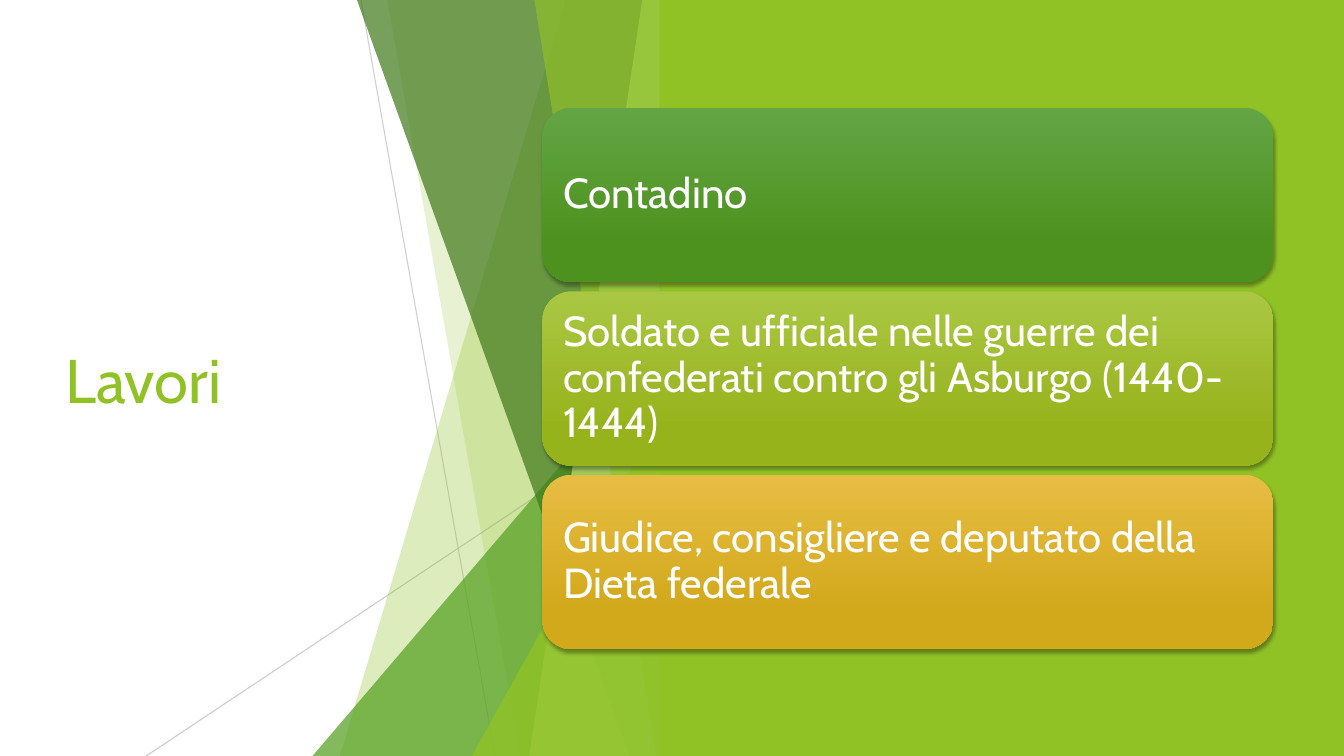
from dataclasses import dataclass

from lxml import etree
from pptx import Presentation
from pptx.dml.color import RGBColor
from pptx.enum.shapes import MSO_CONNECTOR, MSO_SHAPE
from pptx.enum.text import MSO_ANCHOR, PP_ALIGN
from pptx.oxml.ns import qn
from pptx.util import Inches, Pt

STRAIGHT = MSO_CONNECTOR.STRAIGHT
RECTANGLE = MSO_SHAPE.RECTANGLE
ROUNDED = MSO_SHAPE.ROUNDED_RECTANGLE
TRIANGLE = MSO_SHAPE.ISOSCELES_TRIANGLE
MIDDLE = MSO_ANCHOR.MIDDLE
LEFT = PP_ALIGN.LEFT

WIDTH, HEIGHT = 13.33, 7.5
FACET_RIGHT = 6.66  # shared right edge of the facets


@dataclass(frozen=True)
class Theme:
    font: str = "Cabin"
    title_size: int = 44
    card_size: int = 30
    lime: str = "90C226"
    green: str = "54A021"
    dark_green: str = "3F7819"
    pale_lime: str = "C0E474"
    grey: str = "BFBFBF"
    white: str = "FFFFFF"
    shadow: str = "000000"
    card_gradients: tuple = (
        ("63A545", "4D921E"),
        ("AAC744", "97B31C"),
        ("E7BC43", "D2A91B"),
    )


class SlideBuilder:
    def __init__(self, slide, theme):
        self.slide = slide
        self.theme = theme

    def set_alpha(self, element, percent):
        color = next(element.iter(qn("a:srgbClr")))
        etree.SubElement(color, qn("a:alpha"), val=str(percent * 1000))

    def paint(self, shape, color, alpha=100):
        shape.shadow.inherit = False
        shape.line.fill.background()
        shape.fill.solid()
        shape.fill.fore_color.rgb = RGBColor.from_string(color)
        if alpha < 100:
            self.set_alpha(shape._element.spPr, alpha)

    def add_line(self, start, end, alpha):
        line = self.slide.shapes.add_connector(
            STRAIGHT, *(Inches(value) for value in start + end))
        line.line.width = Pt(0.75)
        line.line.color.rgb = RGBColor.from_string(self.theme.grey)
        properties = line._element.spPr
        self.set_alpha(properties, alpha)
        etree.SubElement(properties, qn("a:effectLst"))

    def add_facet(self, top_x, bottom_x, color, alpha):
        corners = [(top_x, 0), (FACET_RIGHT, 0),
                   (FACET_RIGHT, HEIGHT), (bottom_x, HEIGHT)]
        points = [(Inches(x), Inches(y)) for x, y in corners]
        outline = self.slide.shapes.build_freeform(*points[0])
        outline.add_line_segments(points[1:], close=True)
        self.paint(outline.convert_to_shape(), color, alpha)

    def add_triangle(self, left, top, color, alpha):
        shape = self.slide.shapes.add_shape(
            TRIANGLE, Inches(left), Inches(top),
            Inches(FACET_RIGHT - left), Inches(HEIGHT - top))
        shape.adjustments[0] = 1
        self.paint(shape, color, alpha)

    def add_panel(self, left, color):
        shape = self.slide.shapes.add_shape(
            RECTANGLE, Inches(left), 0, Inches(WIDTH - left), Inches(HEIGHT))
        self.paint(shape, color)

    def set_text(self, shape, text, size, color):
        frame = shape.text_frame
        frame.word_wrap = True
        frame.vertical_anchor = MIDDLE
        paragraph = frame.paragraphs[0]
        paragraph.text = text
        paragraph.alignment = LEFT
        paragraph.font.name = self.theme.font
        paragraph.font.size = Pt(size)
        paragraph.font.color.rgb = RGBColor.from_string(color)
        return frame

    def add_title(self, text, left, top, width, height):
        box = self.slide.shapes.add_textbox(
            Inches(left), Inches(top), Inches(width), Inches(height))
        self.set_text(box, text, self.theme.title_size, self.theme.lime)

    def add_card(self, text, top, gradient):
        card = self.slide.shapes.add_shape(
            ROUNDED, Inches(5.38), Inches(top), Inches(7.25), Inches(1.73))
        card.line.fill.background()
        card.fill.gradient()
        card.fill.gradient_angle = 270
        for stop, position, color in zip(
                card.fill.gradient_stops, (0, 0.78), gradient):
            stop.position = position
            stop.color.rgb = RGBColor.from_string(color)
        self.add_shadow(card)
        frame = self.set_text(card, text, self.theme.card_size, self.theme.white)
        frame.margin_left = frame.margin_right = Inches(0.12)
        frame.margin_top = frame.margin_bottom = Inches(0.12)
        frame.paragraphs[0].line_spacing = 0.9

    def add_shadow(self, shape):
        shape.shadow.inherit = False
        effects = shape._element.spPr.find(qn("a:effectLst"))
        shadow = etree.SubElement(
            effects, qn("a:outerShdw"), blurRad=str(Pt(3)), dist=str(Pt(2)),
            dir="5400000", rotWithShape="0")
        etree.SubElement(shadow, qn("a:srgbClr"), val=self.theme.shadow)
        self.set_alpha(shadow, 35)


def main():
    presentation = Presentation()
    presentation.slide_width = Inches(WIDTH)
    presentation.slide_height = Inches(HEIGHT)
    theme = Theme()
    slide = presentation.slides.add_slide(presentation.slide_layouts[6])
    builder = SlideBuilder(slide, theme)

    # Title
    builder.add_title("Lavori", 0.55, 1.52, 3.88, 4.48)

    # Faceted band, back to front
    builder.add_line((3.58, 0), (4.91, HEIGHT), 75)
    builder.add_line((FACET_RIGHT, 4.03), (1.45, HEIGHT), 80)
    builder.add_facet(5.61, 3.37, theme.lime, 30)
    builder.add_facet(3.84, 5.16, theme.lime, 20)
    builder.add_triangle(3.1, 3.33, theme.green, 72)
    builder.add_facet(3.54, 6.24, theme.dark_green, 70)
    builder.add_facet(6.37, 5.25, theme.pale_lime, 70)
    builder.add_facet(5.3, 6.51, theme.lime, 65)
    builder.add_triangle(4.68, 3.93, theme.lime, 80)

    # Right panel
    builder.add_panel(6.54, theme.lime)

    # Job cards
    jobs = (
        "Contadino",
        "Soldato e ufficiale nelle guerre dei confederati contro gli Asburgo (1440-1444)",
        "Giudice, consigliere e deputato della Dieta federale",
    )
    for index, (job, gradient) in enumerate(zip(jobs, theme.card_gradients)):
        builder.add_card(job, 1.07 + 1.82 * index, gradient)

    presentation.save("out.pptx")


if __name__ == "__main__":
    main()
